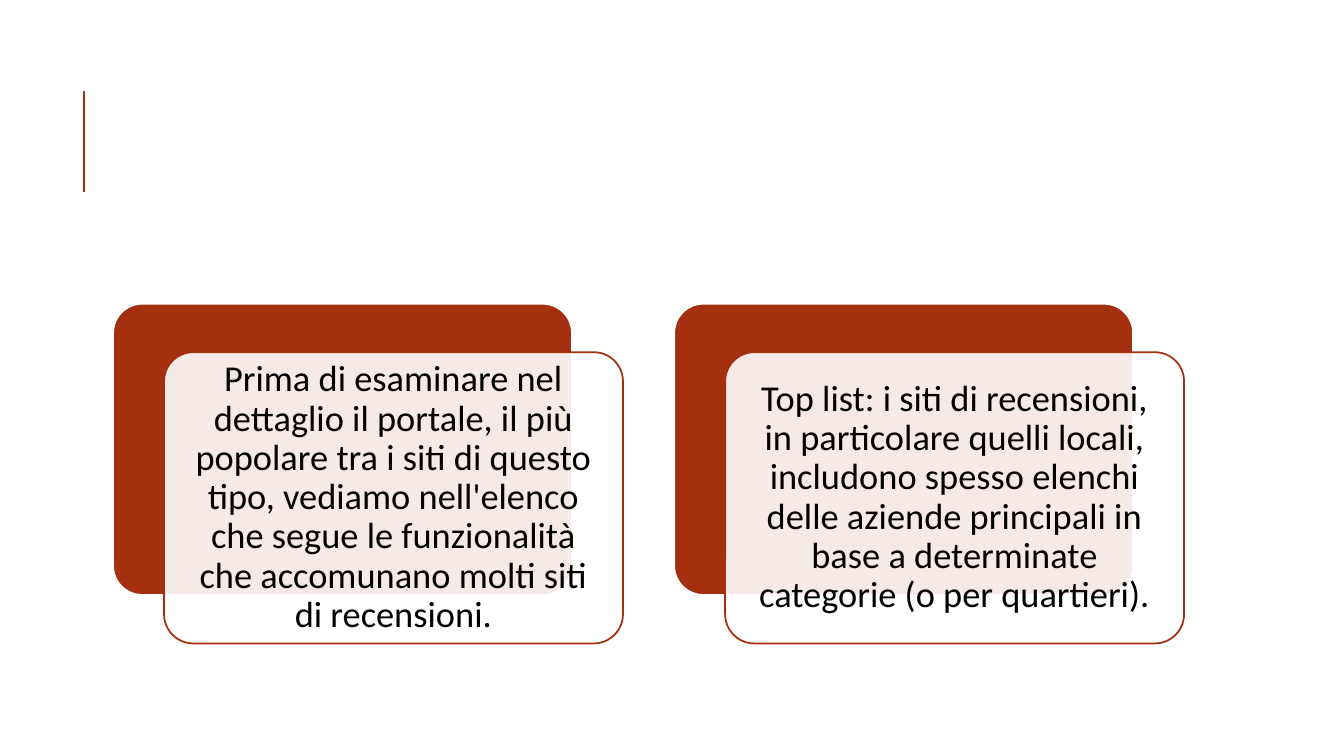
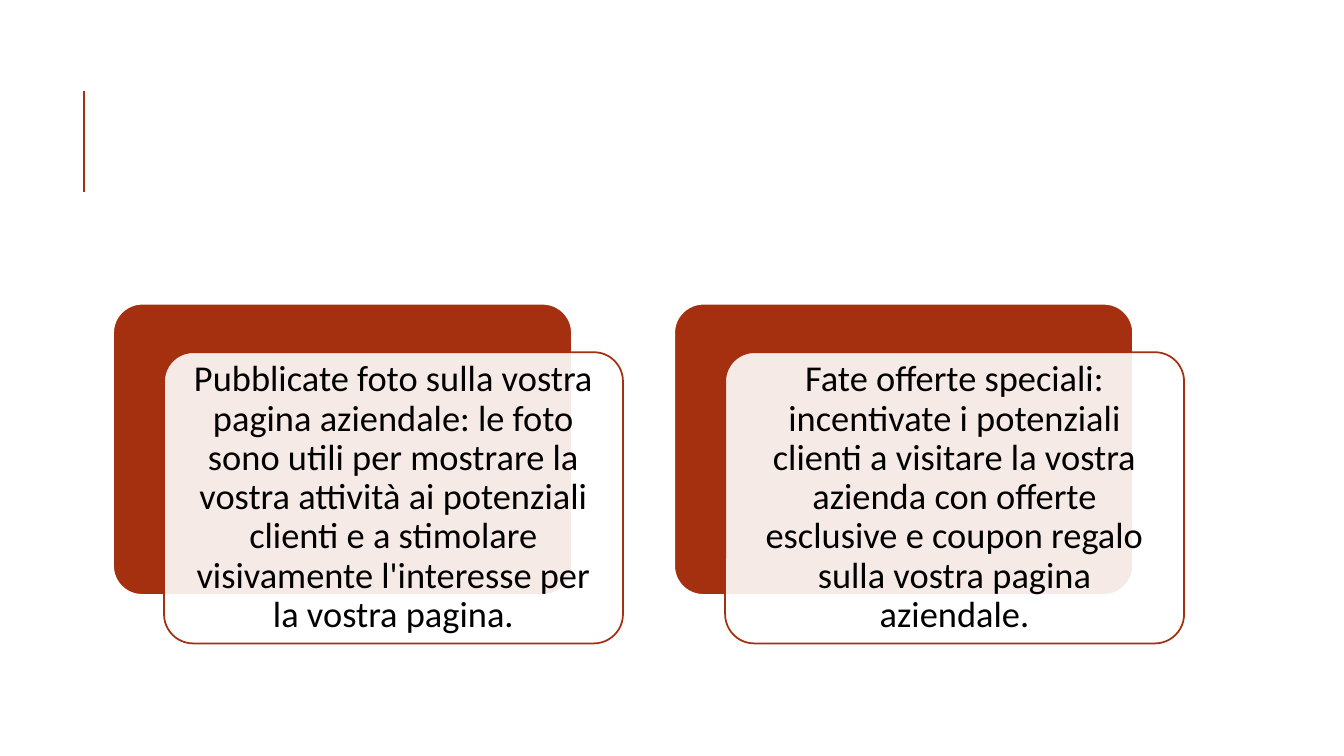
from lxml import etree
from pptx import Presentation
from pptx.dml.color import RGBColor
from pptx.enum.shapes import MSO_CONNECTOR, MSO_SHAPE
from pptx.enum.text import MSO_ANCHOR, PP_ALIGN
from pptx.oxml.ns import qn
from pptx.util import Pt

ROUNDED = MSO_SHAPE.ROUNDED_RECTANGLE
STRAIGHT = MSO_CONNECTOR.STRAIGHT
MIDDLE = MSO_ANCHOR.MIDDLE
CENTER = PP_ALIGN.CENTER

RUST = "A5300F"
WHITE = "FFFFFF"
BLACK = "000000"
FONT = "Calibri"

CARD_LEFT, CARD_TOP = 80.8, 217
CARD_WIDTH, CARD_HEIGHT = 327.8, 208
CARD_STEP = 400.8
FRONT_RIGHT, FRONT_DOWN = 36.4, 34.6
TEXT_INSET = 8

SLIDES = [
    [
        "Prima di esaminare nel dettaglio il portale, il più popolare tra i siti di questo tipo, "
        "vediamo nell'elenco che segue le funzionalità che accomunano molti siti di recensioni.",
        "Top list: i siti di recensioni, in particolare quelli locali, includono spesso elenchi "
        "delle aziende principali in base a determinate categorie (o per quartieri).",
    ],
    [
        "Pubblicate foto sulla vostra pagina aziendale: le foto sono utili per mostrare la vostra "
        "attività ai potenziali clienti e a stimolare visivamente l'interesse per la vostra pagina.",
        "Fate offerte speciali: incentivate i potenziali clienti a visitare la vostra azienda "
        "con offerte esclusive e coupon regalo sulla vostra pagina aziendale.",
    ],
]


def color(hex_string):
    return RGBColor.from_string(hex_string)


def add_card(slide, left, top, fill, line):
    shape = slide.shapes.add_shape(ROUNDED, Pt(left), Pt(top), Pt(CARD_WIDTH), Pt(CARD_HEIGHT))
    shape.adjustments[0] = 0.1
    shape.shadow.inherit = False
    shape.fill.solid()
    shape.fill.fore_color.rgb = color(fill)
    shape.line.color.rgb = color(line)
    shape.line.width = Pt(1.25)
    return shape


presentation = Presentation()
presentation.slide_width = Pt(960)
presentation.slide_height = Pt(540)

for texts in SLIDES:
    slide = presentation.slides.add_slide(presentation.slide_layouts[6])

    title_rule = slide.shapes.add_connector(STRAIGHT, Pt(60), Pt(137), Pt(60), Pt(65))
    title_rule.line.color.rgb = color(RUST)
    title_rule.line.width = Pt(1.5)
    etree.SubElement(title_rule._element.spPr, qn("a:effectLst"))

    for column, text in enumerate(texts):
        left = CARD_LEFT + column * CARD_STEP
        add_card(slide, left, CARD_TOP, RUST, WHITE)
        front = add_card(slide, left + FRONT_RIGHT, CARD_TOP + FRONT_DOWN, WHITE, RUST)
        fill_color = front._element.spPr.find(qn("a:solidFill")).find(qn("a:srgbClr"))
        etree.SubElement(fill_color, qn("a:alpha"), val="90000")

        frame = front.text_frame
        frame.word_wrap = True
        frame.vertical_anchor = MIDDLE
        frame.margin_left = frame.margin_right = Pt(TEXT_INSET)
        frame.margin_top = frame.margin_bottom = Pt(TEXT_INSET)
        paragraph = frame.paragraphs[0]
        paragraph.text = text
        paragraph.alignment = CENTER
        paragraph.line_spacing = 0.9
        paragraph.font.name = FONT
        paragraph.font.size = Pt(26)
        paragraph.font.color.rgb = color(BLACK)

presentation.save("out.pptx")
